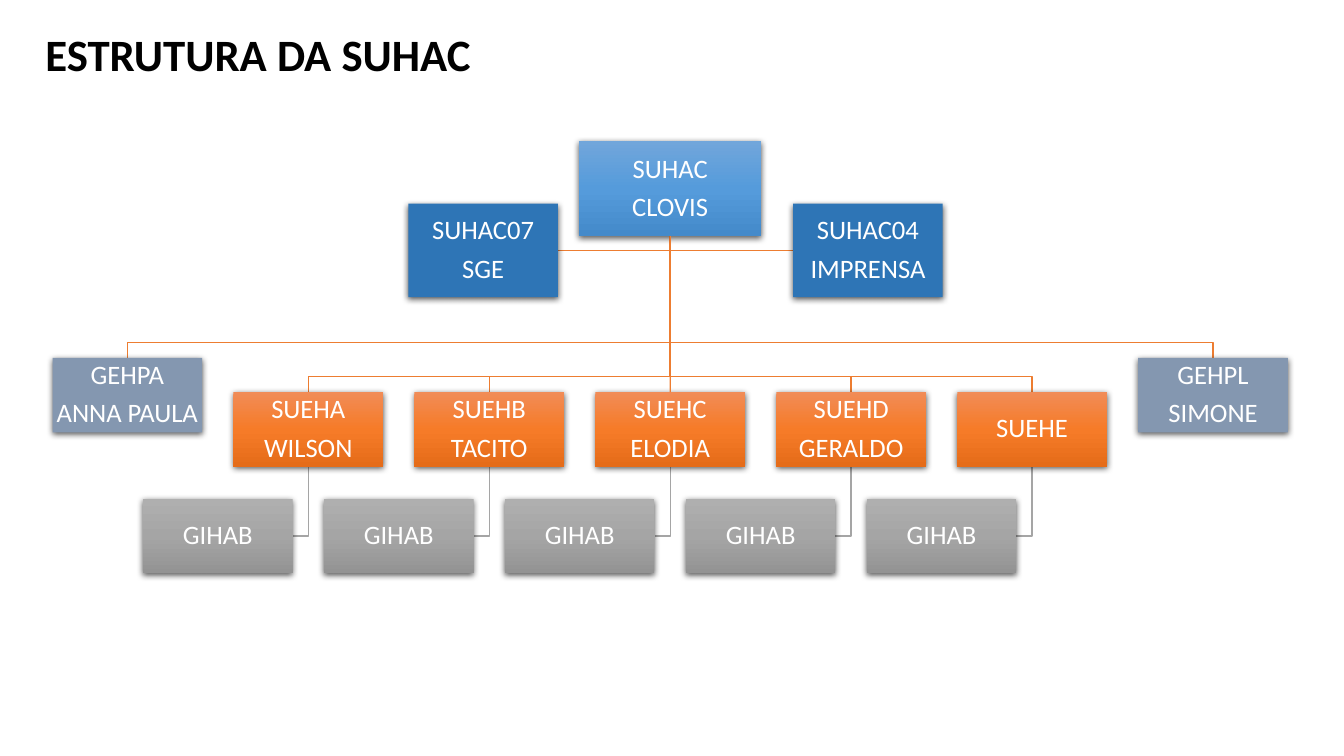
from lxml import etree
from pptx import Presentation
from pptx.dml.color import RGBColor
from pptx.enum.shapes import MSO_CONNECTOR, MSO_SHAPE
from pptx.enum.text import MSO_ANCHOR, PP_ALIGN
from pptx.oxml.ns import qn
from pptx.util import Cm, Pt

RECTANGLE = MSO_SHAPE.RECTANGLE
STRAIGHT = MSO_CONNECTOR.STRAIGHT
MIDDLE = MSO_ANCHOR.MIDDLE
CENTER, LEFT = PP_ALIGN.CENTER, PP_ALIGN.LEFT

# Content
TITLE = "ESTRUTURA DA SUHAC"
HEAD = ["SUHAC", "CLOVIS"]
LEFT_ASSISTANT = ["SUHAC07", "SGE"]
RIGHT_ASSISTANT = ["SUHAC04", "IMPRENSA"]
# Column offset from the centre, text
MANAGERS = [(-3, ["GEHPA", "ANNA PAULA"]), (3, ["GEHPL", "SIMONE"])]
UNITS = [
    (-2, ["SUEHA", "WILSON"]),
    (-1, ["SUEHB", "TACITO"]),
    (0, ["SUEHC", "ELODIA"]),
    (1, ["SUEHD", "GERALDO"]),
    (2, ["SUEHE"]),
]
BRANCH = ["GIHAB"]

# Style
FONT = "Calibri"
COLORS = {
    "title": "000000", "text": "FFFFFF", "shadow": "000000",
    "orange_line": "ED7D31", "gray_line": "A5A5A5",
}
FILLS = {
    "head": ["71A6DB", "559BDB", "448ACA"],
    "assistant": ["2E75B6"],
    "manager": ["8497B0"],
    "unit": ["F18C57", "F67B28", "E56C19"],
    "branch": ["AFAFAF", "A5A5A5", "939393"],
}

# Layout in centimetres
CENTER_X, PITCH = 16.89, 4.56
BOX_WIDTH, BOX_HEIGHT = 3.77, 1.88
HEAD_TOP, HEAD_WIDTH, HEAD_HEIGHT = 3.56, 4.6, 2.39
ASSISTANT_TOP, ASSISTANT_HEIGHT = 5.13, 2.36
ASSISTANT_LEFTS = (10.29, 19.99)
MANAGER_TOP, UNIT_TOP, BRANCH_TOP = 9.02, 9.88, 12.57
BUS_GAP = 0.39
HEAD_BOTTOM = HEAD_TOP + HEAD_HEIGHT

presentation = Presentation()
presentation.slide_width, presentation.slide_height = Cm(33.87), Cm(19.05)
slide = presentation.slides.add_slide(presentation.slide_layouts[5])


def column_center(offset):
    return CENTER_X + offset * PITCH


def format_runs(paragraph, size, color, bold=False):
    for run in paragraph.runs:
        run.font.name, run.font.size, run.font.bold = FONT, Pt(size), bold
        run.font.color.rgb = RGBColor.from_string(COLORS[color])


def paint(shape, colors):
    if len(colors) == 1:
        shape.fill.solid()
        shape.fill.fore_color.rgb = RGBColor.from_string(colors[0])
        return
    shape.fill.gradient()
    shape.fill.gradient_angle = 270
    stops = shape.element.spPr.find(".//" + qn("a:gsLst"))
    for stop in list(stops):
        stops.remove(stop)
    for index, color in enumerate(colors):
        stop = etree.SubElement(stops, qn("a:gs"), pos=str(index * 50000))
        etree.SubElement(stop, qn("a:srgbClr"), val=color)


def add_shadow(shape):
    shape.shadow.inherit = False
    effects = shape.element.spPr.find(qn("a:effectLst"))
    shadow = etree.SubElement(effects, qn("a:outerShdw"), blurRad="57150",
                              dist="19050", dir="5400000", rotWithShape="0")
    color = etree.SubElement(shadow, qn("a:srgbClr"), val=COLORS["shadow"])
    etree.SubElement(color, qn("a:alpha"), val="63000")


def add_box(kind, lines, left, top, width=BOX_WIDTH, height=BOX_HEIGHT):
    box = slide.shapes.add_shape(RECTANGLE, Cm(left), Cm(top), Cm(width), Cm(height))
    paint(box, FILLS[kind])
    box.line.fill.background()
    add_shadow(box)
    frame = box.text_frame
    frame.word_wrap, frame.vertical_anchor = True, MIDDLE
    frame.margin_left = frame.margin_right = Cm(0.03)
    frame.margin_top = frame.margin_bottom = Cm(0.03)
    frame.text = "\n".join(lines)
    for paragraph in frame.paragraphs:
        paragraph.alignment, paragraph.line_spacing = CENTER, 0.9
        paragraph.space_after = Pt(6.65)
        format_runs(paragraph, 19, "text")
    return box


def style_line(shape, color):
    shape.line.color.rgb = RGBColor.from_string(COLORS[color])
    shape.line.width = Pt(1)


def add_elbow(points, color="orange_line"):
    start, *rest = [(Cm(x), Cm(y)) for x, y in points]
    builder = slide.shapes.build_freeform(*start)
    builder.add_line_segments(rest, close=False)
    elbow = builder.convert_to_shape()
    elbow.fill.background()
    style_line(elbow, color)
    elbow.shadow.inherit = False


def add_drop(x, top):
    bus = top - BUS_GAP
    add_elbow([(CENTER_X, HEAD_BOTTOM), (CENTER_X, bus), (x, bus), (x, top)])


# Title
title = slide.shapes.title
title.left, title.top, title.width, title.height = Cm(0.89), Cm(0.56), Cm(30.86), Cm(1.6)
title.text_frame.text = TITLE
title.text_frame.vertical_anchor = MIDDLE
title.text_frame.paragraphs[0].alignment = LEFT
format_runs(title.text_frame.paragraphs[0], 32, "title", bold=True)

# Elbow lines, behind the boxes
assistant_middle = ASSISTANT_TOP + ASSISTANT_HEIGHT / 2
for edge in (ASSISTANT_LEFTS[0] + BOX_WIDTH, ASSISTANT_LEFTS[1]):
    add_elbow([(CENTER_X, HEAD_BOTTOM), (CENTER_X, assistant_middle),
               (edge, assistant_middle)])
for offset, _ in MANAGERS:
    add_drop(column_center(offset), MANAGER_TOP)
for offset, _ in UNITS:
    x = column_center(offset)
    if offset:
        add_drop(x, UNIT_TOP)
    branch_middle = BRANCH_TOP + BOX_HEIGHT / 2
    branch_right = x - PITCH / 2 + BOX_WIDTH / 2
    add_elbow([(x, UNIT_TOP + BOX_HEIGHT), (x, branch_middle),
               (branch_right, branch_middle)], "gray_line")

# Boxes
head = add_box("head", HEAD, CENTER_X - HEAD_WIDTH / 2, HEAD_TOP, HEAD_WIDTH, HEAD_HEIGHT)
for left, lines in zip(ASSISTANT_LEFTS, (LEFT_ASSISTANT, RIGHT_ASSISTANT)):
    add_box("assistant", lines, left, ASSISTANT_TOP, height=ASSISTANT_HEIGHT)
for offset, lines in MANAGERS:
    add_box("manager", lines, column_center(offset) - BOX_WIDTH / 2, MANAGER_TOP)
unit_boxes = {}
for offset, lines in UNITS:
    left = column_center(offset) - BOX_WIDTH / 2
    unit_boxes[offset] = add_box("unit", lines, left, UNIT_TOP)
    add_box("branch", BRANCH, left - PITCH / 2, BRANCH_TOP)

# Straight line from the head to the central unit
trunk = slide.shapes.add_connector(STRAIGHT, 0, 0, 0, 0)
trunk.begin_connect(head, 2)
trunk.end_connect(unit_boxes[0], 0)
style_line(trunk, "orange_line")
etree.SubElement(trunk.element.spPr, qn("a:effectLst"))

presentation.save("out.pptx")
